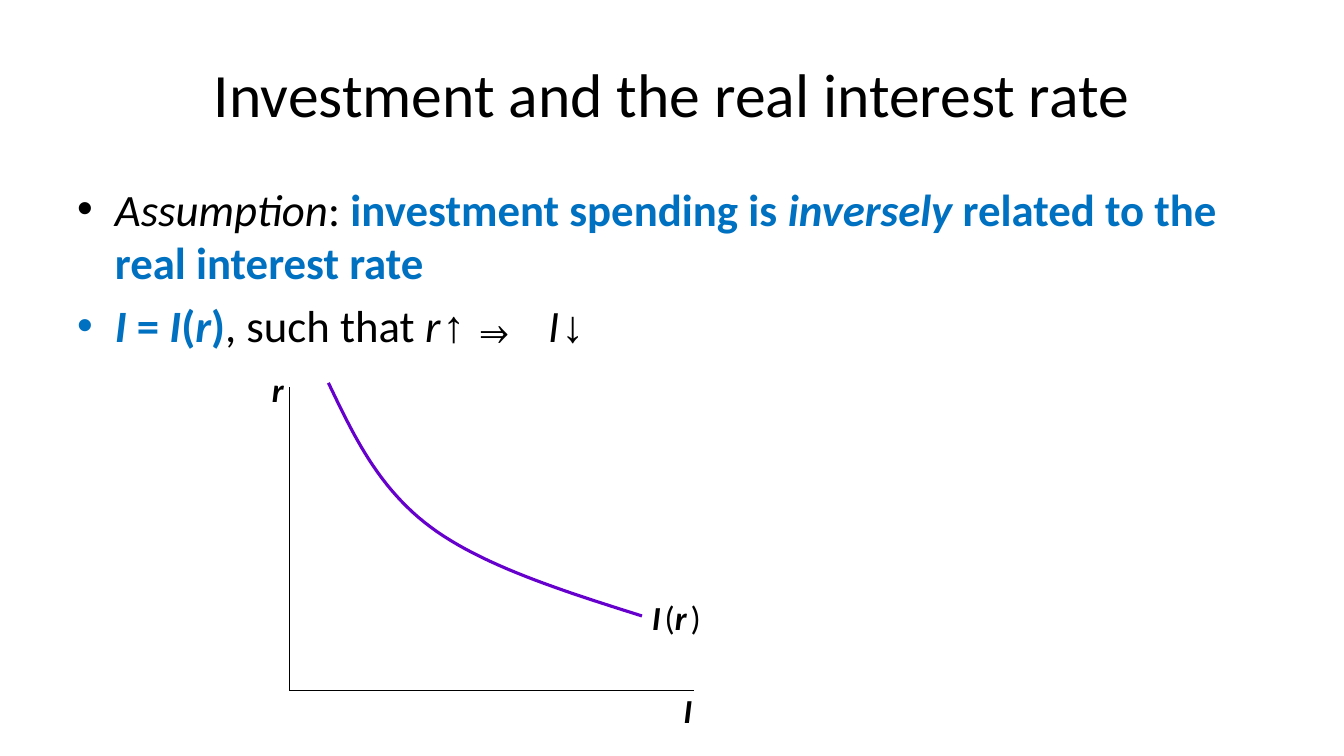
from dataclasses import dataclass

from lxml import etree
from pptx import Presentation
from pptx.dml.color import RGBColor
from pptx.enum import shapes, text
from pptx.oxml import ns
from pptx.util import Pt


@dataclass(frozen=True)
class Theme:
    font: str = "Calibri"
    symbol_font: str = "Noto Sans Mono"
    ink: RGBColor = RGBColor(0, 0, 0)
    accent: RGBColor = RGBColor(0x00, 0x70, 0xC0)
    curve: RGBColor = RGBColor(0x66, 0x00, 0xCC)
    title: int = 44
    body: int = 32
    label: int = 24
    thin_space: int = 12
    axis_width: float = 0.75
    curve_width: float = 2.25


THEME = Theme()


def add_runs(p, size, runs):
    """Add (text, style) runs; style letters: b bold, i italic, a accent, s symbol font, t thin space."""
    for words, style in runs:
        r = p.add_run()
        r.text = words
        r.font.name = THEME.symbol_font if "s" in style else THEME.font
        r.font.size = Pt(THEME.thin_space if "t" in style else size)
        r.font.bold = "b" in style
        r.font.italic = "i" in style
        r.font.color.rgb = THEME.accent if "a" in style else THEME.ink


def add_title(s, box, words):
    sp = s.shapes.title
    sp.left, sp.top, sp.width, sp.height = map(Pt, box)
    tf = sp.text_frame
    tf.vertical_anchor = text.MSO_ANCHOR.MIDDLE
    p = tf.paragraphs[0]
    p.alignment = text.PP_ALIGN.CENTER
    add_runs(p, THEME.title, [(words, "")])


def set_bullet(p, indent):
    pPr = p._p.get_or_add_pPr()
    pPr.set("marL", str(Pt(indent)))
    pPr.set("indent", str(-Pt(indent)))
    etree.SubElement(pPr, ns.qn("a:buFont"), typeface="Arial")
    etree.SubElement(pPr, ns.qn("a:buChar"), char="•")


def add_bullets(s, box, bullets):
    tf = s.shapes.add_textbox(*map(Pt, box)).text_frame
    tf.word_wrap = True
    for i, runs in enumerate(bullets):
        p = tf.add_paragraph() if i else tf.paragraphs[0]
        if i:
            p.space_before = Pt(0.2 * THEME.body)
        set_bullet(p, 27)
        add_runs(p, THEME.body, runs)


def add_label(s, box, runs, align=text.PP_ALIGN.CENTER):
    tf = s.shapes.add_textbox(*map(Pt, box)).text_frame
    tf.word_wrap = False
    tf.auto_size = text.MSO_AUTO_SIZE.SHAPE_TO_FIT_TEXT
    p = tf.paragraphs[0]
    p.alignment = align
    add_runs(p, THEME.label, runs)


def add_axis(s, x1, y1, x2, y2):
    line = s.shapes.add_connector(shapes.MSO_CONNECTOR.STRAIGHT, Pt(x1), Pt(y1), Pt(x2), Pt(y2))
    line.line.color.rgb = THEME.ink
    line.line.width = Pt(THEME.axis_width)
    etree.SubElement(line._element.spPr, ns.qn("a:effectLst"))


def bezier(a, b, c, d, steps=24):
    """Return the points after a along a cubic curve from a to d."""
    points = []
    for k in range(1, steps + 1):
        t = k / steps
        weights = ((1 - t) ** 3, 3 * t * (1 - t) ** 2, 3 * t * t * (1 - t), t ** 3)
        points.append(tuple(sum(w * q[n] for w, q in zip(weights, (a, b, c, d))) for n in (0, 1)))
    return points


def add_curve(s, left, top, start, segments):
    points = [start]
    for segment in segments:
        points += bezier(points[-1], *segment)
    points = [(Pt(left + x), Pt(top + y)) for x, y in points]
    builder = s.shapes.build_freeform(*points[0])
    builder.add_line_segments(points[1:], close=False)
    sp = builder.convert_to_shape()
    sp.shadow.inherit = False
    sp.fill.background()
    sp.line.color.rgb = THEME.curve
    sp.line.width = Pt(THEME.curve_width)


def add_investment_graph(s, box):
    left, top, width, height = box
    right, bottom = left + width, top + height
    add_axis(s, left, top, left, bottom)
    add_axis(s, left, bottom, right, bottom)
    add_label(s, (left - 20.8, top - 16.6, 25.2, 36), [("r", "bi")])
    add_label(s, (right - 16.6, bottom - 3.6, 25.2, 36), [("I", "bi")])
    add_label(s, (left + 252, top + 146, 52, 36),
              [("I", "bi"), (" ", "bit"), ("(", ""), ("r", "bi"), (" ", "bit"), (")", "")],
              text.PP_ALIGN.LEFT)
    add_curve(s, left, top, (28, -3), [
        ((46, 34.5), (63.5, 72), (101, 100)),
        ((138, 127.5), (195, 145.5), (252, 163.5)),
    ])


def main():
    prs = Presentation()
    prs.slide_width, prs.slide_height = Pt(960), Pt(540)
    s = prs.slides.add_slide(prs.slide_layouts[5])
    add_title(s, (48, 21.6, 864, 90), "Investment and the real interest rate")
    add_bullets(s, (48, 126, 864, 356.4), [
        [("Assumption", "i"), (": ", ""), ("investment spending is ", "ab"),
         ("inversely", "abi"), (" related to the real interest rate", "ab")],
        [("I", "abi"), (" = ", "ab"), ("I", "abi"), ("(", "ab"), ("r", "abi"), (")", "ab"),
         (", such that ", ""), ("r", "i"), ("↑⇒ ", "s"), ("I", "i"), ("↓", "s")],
    ])
    add_investment_graph(s, (206.6, 276.5, 288.8, 216.7))
    prs.save("out.pptx")


if __name__ == "__main__":
    main()
